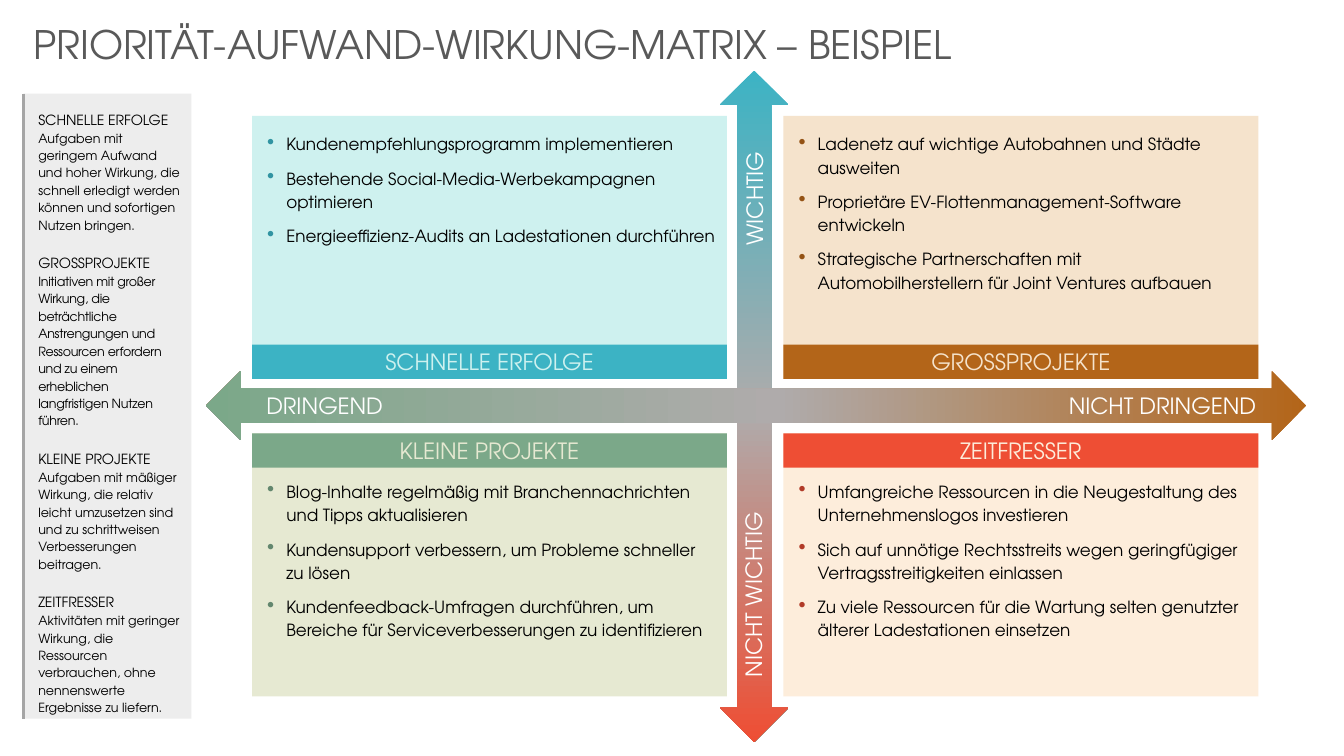
"""Builds a priority-effort-impact matrix slide."""
import copy
from dataclasses import dataclass

import pptx
import pptx.dml.color
import pptx.enum.shapes
import pptx.enum.text
import pptx.oxml
import pptx.oxml.ns
import pptx.util

PX = 9144
SHAPES = pptx.enum.shapes.MSO_SHAPE
ALIGN = pptx.enum.text.PP_ALIGN
ANCHOR = pptx.enum.text.MSO_ANCHOR


@dataclass(frozen=True)
class Theme:
    """Holds the font, type sizes and colours of the slide."""
    font: str = "TeX Gyre Adventor"
    title_size: int = 28
    label_size: int = 16
    body_size: int = 12
    term_size: int = 10
    note_size: int = 9
    title: str = "595959"
    text: str = "000000"
    white: str = "FFFFFF"
    sidebar: str = "EDEDED"
    rule: str = "A5A5A5"
    middle: str = "AFABAB"
    teal: str = "3CB3C4"
    brown: str = "B36519"
    green: str = "7BA889"
    red: str = "EE4E34"


THEME = Theme()

DEFINITIONS = [
    ("SCHNELLE ERFOLGE", "Aufgaben mit geringem Aufwand und hoher Wirkung, die schnell erledigt "
     "werden können und sofortigen Nutzen bringen.", 0),
    ("GROSSPROJEKTE", "Initiativen mit großer Wirkung, die beträchtliche Anstrengungen und "
     "Ressourcen erfordern und zu einem erheblichen langfristigen Nutzen führen.", -20),
    ("KLEINE PROJEKTE", "Aufgaben mit mäßiger Wirkung, die relativ leicht umzusetzen sind und "
     "zu schrittweisen Verbesserungen beitragen.", 0),
    ("ZEITFRESSER", "Aktivitäten mit geringer Wirkung, die Ressourcen verbrauchen, ohne "
     "nennenswerte Ergebnisse zu liefern.", 0),
]

QUADRANTS = [
    ("SCHNELLE ERFOLGE", THEME.teal, "CEF1EF", "3194A2", [
        "Kundenempfehlungsprogramm implementieren",
        "Bestehende Social-Media-Werbekampagnen optimieren",
        "Energieeffizienz-Audits an Ladestationen durchführen"]),
    ("GROSSPROJEKTE", THEME.brown, "F5E3CC", "945315", [
        "Ladenetz auf wichtige Autobahnen und Städte ausweiten",
        "Proprietäre EV-Flottenmanagement-Software entwickeln",
        "Strategische Partnerschaften mit Automobilherstellern für Joint Ventures aufbauen"]),
    ("KLEINE PROJEKTE", THEME.green, "E6E9D2", "63876E", [
        "Blog-Inhalte regelmäßig mit Branchennachrichten und Tipps aktualisieren",
        "Kundensupport verbessern, um Probleme schneller zu lösen",
        "Kundenfeedback-Umfragen durchführen, um Bereiche für Serviceverbesserungen "
        "zu identifizieren"]),
    ("ZEITFRESSER", THEME.red, "FDEDDB", "B13B28", [
        "Umfangreiche Ressourcen in die Neugestaltung des Unternehmenslogos investieren",
        "Sich auf unnötige Rechtsstreits wegen geringfügiger Vertragsstreitigkeiten einlassen",
        "Zu viele Ressourcen für die Wartung selten genutzter älterer Ladestationen einsetzen"]),
]


def rgb(value):
    """Turns a hex string into a colour."""
    return pptx.dml.color.RGBColor.from_string(value)


def emu(box):
    """Turns a box in px into EMU lengths."""
    return [length * PX for length in box]


def style(paragraph, size, color):
    """Formats the runs of a paragraph."""
    for run in paragraph.runs:
        run.font.name = THEME.font
        run.font.size = pptx.util.Pt(size)
        run.font.color.rgb = rgb(color)


def set_frame(frame, insets, anchor=ANCHOR.TOP):
    """Sets wrapping, anchor and px insets of a text frame."""
    frame.word_wrap = True
    frame.vertical_anchor = anchor
    (frame.margin_left, frame.margin_top,
     frame.margin_right, frame.margin_bottom) = emu(insets)


def add_block(slide, box, fill, preset=SHAPES.RECTANGLE):
    """Adds a borderless shape with a plain fill."""
    shape = slide.shapes.add_shape(preset, *emu(box))
    shape.shadow.inherit = False
    shape.line.fill.background()
    shape.fill.solid()
    shape.fill.fore_color.rgb = rgb(fill)
    return shape


def set_label(shape, text, color):
    """Writes one centred label into a shape."""
    set_frame(shape.text_frame, (0, 0, 0, 0), ANCHOR.MIDDLE)
    shape.text_frame.text = text
    paragraph = shape.text_frame.paragraphs[0]
    paragraph.alignment = ALIGN.CENTER
    style(paragraph, THEME.label_size, color)


def add_paragraphs(frame, texts):
    """Fills a frame with left-aligned paragraphs and returns them."""
    frame.text = "\n".join(texts)
    for paragraph in frame.paragraphs:
        paragraph.alignment = ALIGN.LEFT
        paragraph.line_spacing = 1.15
    return frame.paragraphs


def add_bullet(paragraph, color):
    """Gives a paragraph a coloured bullet with a hanging indent."""
    properties = paragraph._p.get_or_add_pPr()
    properties.set("marL", str(19 * PX))
    properties.set("indent", str(-19 * PX))
    namespace = pptx.oxml.ns.nsdecls("a")
    for xml in (f'<a:buClr {namespace}><a:srgbClr val="{color}"/></a:buClr>',
                f'<a:buSzPct {namespace} val="125000"/>',
                f'<a:buChar {namespace} char="•"/>'):
        properties.append(pptx.oxml.parse_xml(xml))


def build_title(slide, box, text):
    """Places and formats the title placeholder."""
    title = slide.shapes.title
    title.left, title.top, title.width, title.height = emu(box)
    set_frame(title.text_frame, (10, 5, 10, 5))
    title.text_frame.auto_size = pptx.enum.text.MSO_AUTO_SIZE.NONE
    title.text_frame.text = text
    paragraph = title.text_frame.paragraphs[0]
    paragraph.alignment = ALIGN.LEFT
    style(paragraph, THEME.title_size, THEME.title)


def build_sidebar(slide, box):
    """Draws the definitions panel with a rule on its left edge."""
    left, top, _, height = box
    frame = add_block(slide, box, THEME.sidebar).text_frame
    set_frame(frame, (15, 15, 10, 5))
    texts = [text for term, note, _ in DEFINITIONS for text in (term, note)]
    paragraphs = add_paragraphs(frame, texts)
    for index, (_, _, tracking) in enumerate(DEFINITIONS):
        term, note = paragraphs[2 * index:2 * index + 2]
        style(term, THEME.term_size, THEME.text)
        style(note, THEME.note_size, THEME.text)
        if index:
            term.space_before = pptx.util.Pt(14)
        if tracking:
            note.runs[0].font._element.set("spc", str(tracking))
    rule = slide.shapes.add_connector(pptx.enum.shapes.MSO_CONNECTOR.STRAIGHT,
                                      *emu((left, top, left, top + height)))
    rule.line.color.rgb = rgb(THEME.rule)
    rule.line.width = pptx.util.Pt(2)
    rule._element.spPr.append(
        pptx.oxml.parse_xml(f'<a:effectLst {pptx.oxml.ns.nsdecls("a")}/>'))


def build_axis(slide, box, stops, rotation, labels):
    """Draws a gradient double arrow and its white labels."""
    arrow = add_block(slide, box, THEME.middle, SHAPES.UP_DOWN_ARROW)
    arrow.rotation = rotation
    arrow.adjustments[0], arrow.adjustments[1] = 0.463, 0.5
    arrow.fill.gradient()
    arrow.fill.gradient_angle = 270
    stop_list = arrow._element.spPr.find(".//" + pptx.oxml.ns.qn("a:gsLst"))
    stop_list.append(copy.deepcopy(stop_list[0]))
    for stop, (position, color) in zip(arrow.fill.gradient_stops, stops):
        stop.position = position
        stop.color.rgb = rgb(color)
    for text, label_box, turn in labels:
        label = slide.shapes.add_textbox(*emu(label_box))
        label.rotation = turn
        set_label(label, text, THEME.white)


def build_quadrant(slide, box, quadrant, banner_on_top):
    """Draws a bulleted panel with its banner on the inner edge."""
    heading, strong, pale, bullet, tasks = quadrant
    left, top, width, height = box
    banner_height = 34
    frame = add_block(slide, box, pale).text_frame
    set_frame(frame, (15, 45 if banner_on_top else 15, 10, 5))
    for paragraph in add_paragraphs(frame, tasks):
        paragraph.space_after = pptx.util.Pt(8)
        add_bullet(paragraph, bullet)
        style(paragraph, THEME.body_size, THEME.text)
    banner_top = top if banner_on_top else top + height - banner_height
    banner = add_block(slide, (left, banner_top, width, banner_height), strong)
    set_label(banner, heading, pale)


def main():
    """Builds and saves the presentation."""
    presentation = pptx.Presentation()
    presentation.slide_width, presentation.slide_height = emu((1333, 750))
    slide = presentation.slides.add_slide(presentation.slide_layouts[5])
    build_title(slide, (23, 15, 1135, 57), "PRIORITÄT-AUFWAND-WIRKUNG-MATRIX – BEISPIEL")
    build_sidebar(slide, (23, 93, 167, 620))
    build_axis(slide, (714, 70, 68, 666),
               [(0, THEME.teal), (0.51, THEME.middle), (1, THEME.red)], 0,
               [("NICHT WICHTIG", (639, 575, 216, 30), 270), ("WICHTIG", (658, 182, 180, 30), 270)])
    build_axis(slide, (716, -143, 68, 1091),
               [(0, THEME.brown), (0.48, THEME.middle), (1, THEME.green)], 90,
               [("DRINGEND", (242, 387, 160, 30), 0), ("NICHT DRINGEND", (1058, 387, 190, 30), 0)])
    for index, quadrant in enumerate(QUADRANTS):
        row, column = divmod(index, 2)
        box = (250 + 527 * column, 115 + 315 * row, 471, 261)
        build_quadrant(slide, box, quadrant, row == 1)
    presentation.save("out.pptx")


if __name__ == "__main__":
    main()
